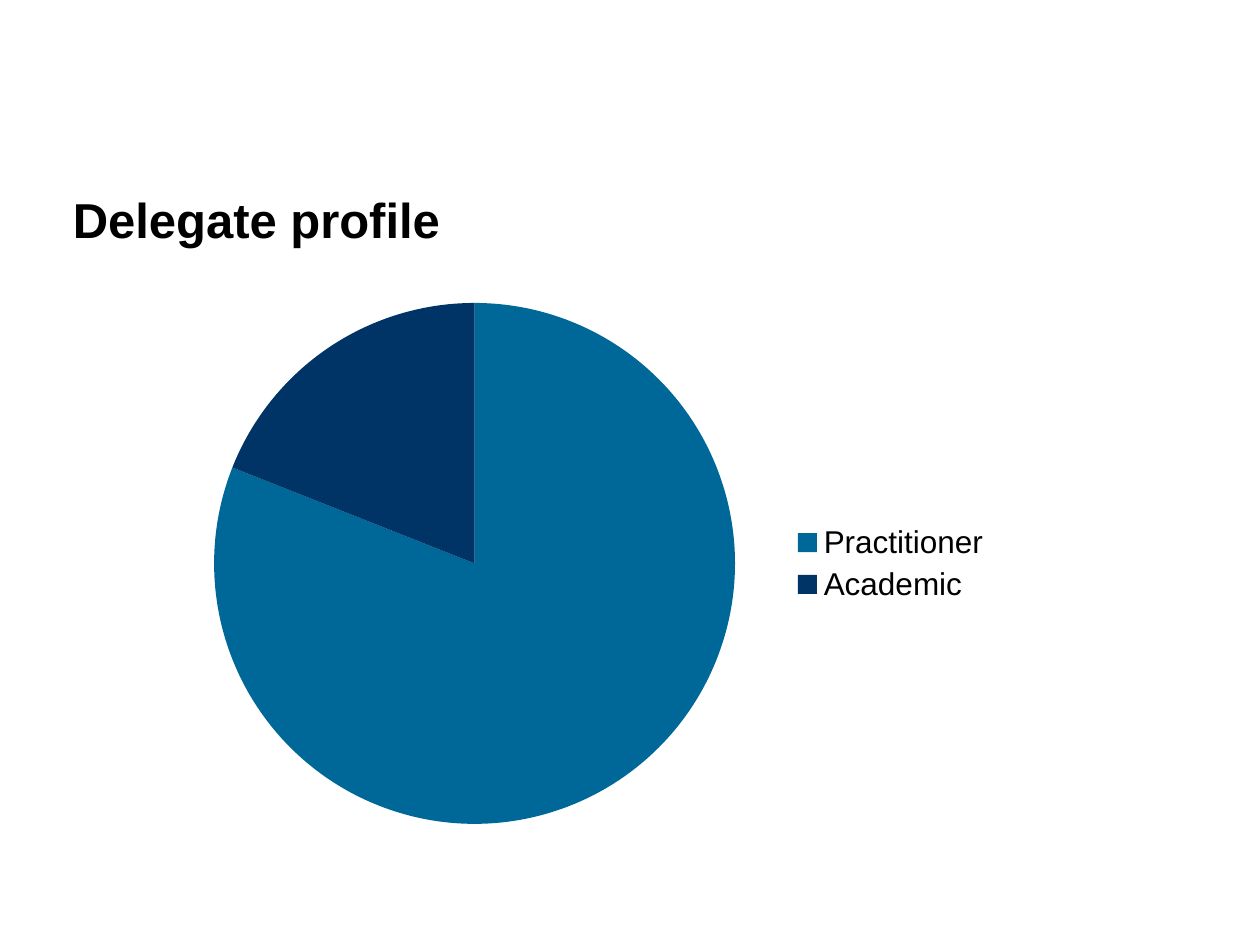
"""Build the delegate profile slide with its pie chart."""
from lxml.etree import SubElement
from pptx import Presentation
from pptx.chart.data import CategoryChartData
from pptx.dml.color import RGBColor
from pptx.enum.chart import XL_CHART_TYPE, XL_LEGEND_POSITION
from pptx.enum.text import MSO_ANCHOR
from pptx.oxml.ns import qn
from pptx.util import Cm, Pt


def style_font(font, size, color, bold=False):
    font.name = "Arial"
    font.size = Pt(size)
    font.bold = bold
    font.color.rgb = RGBColor.from_string(color)


deck = Presentation()
deck.slide_width, deck.slide_height = Cm(25.4), Cm(19.05)
page = deck.slides.add_slide(deck.slide_layouts[6])

title = page.shapes.add_textbox(Cm(1.47), Cm(3.73), Cm(22.4), Cm(1.68))
frame = title.text_frame
frame.word_wrap = True
frame.vertical_anchor = MSO_ANCHOR.TOP
frame.margin_left = frame.margin_right = frame.margin_bottom = 0
frame.margin_top = Cm(0.09)
paragraph = frame.paragraphs[0]
paragraph.text = "Delegate profile"
style_font(paragraph.font, 28, "000000", bold=True)

profile = {"Practitioner": (81, "006899"), "Academic": (19, "003366")}
data = CategoryChartData()
data.categories = list(profile)
data.add_series("Series 1", [value for value, color in profile.values()])
chart = page.shapes.add_chart(
    XL_CHART_TYPE.PIE, Cm(3.3), Cm(5.72), Cm(16.94), Cm(11.28), data
).chart
chart.has_title = False
style_font(chart.font, 18, "000000")
chart.has_legend = True
chart.legend.position = XL_LEGEND_POSITION.RIGHT
chart.legend.include_in_layout = False

pie = chart.plots[0]
pie.vary_by_categories = True
for index, (value, color) in enumerate(profile.values()):
    slice_format = pie.series[0].points[index].format
    slice_format.fill.solid()
    slice_format.fill.fore_color.rgb = RGBColor.from_string(color)
    slice_format.line.fill.background()

plot_area = chart.element.find(".//" + qn("c:plotArea"))
layout = plot_area.find(qn("c:layout"))
if layout is None:
    layout = SubElement(plot_area, qn("c:layout"))
    plot_area.insert(0, layout)
manual = SubElement(layout, qn("c:manualLayout"))
settings = {"layoutTarget": "inner", "xMode": "edge", "yMode": "edge",
            "x": "0.06", "y": "0.03", "w": "0.62", "h": "0.94"}
for name, value in settings.items():
    SubElement(manual, qn("c:" + name)).set("val", value)

deck.save("out.pptx")
